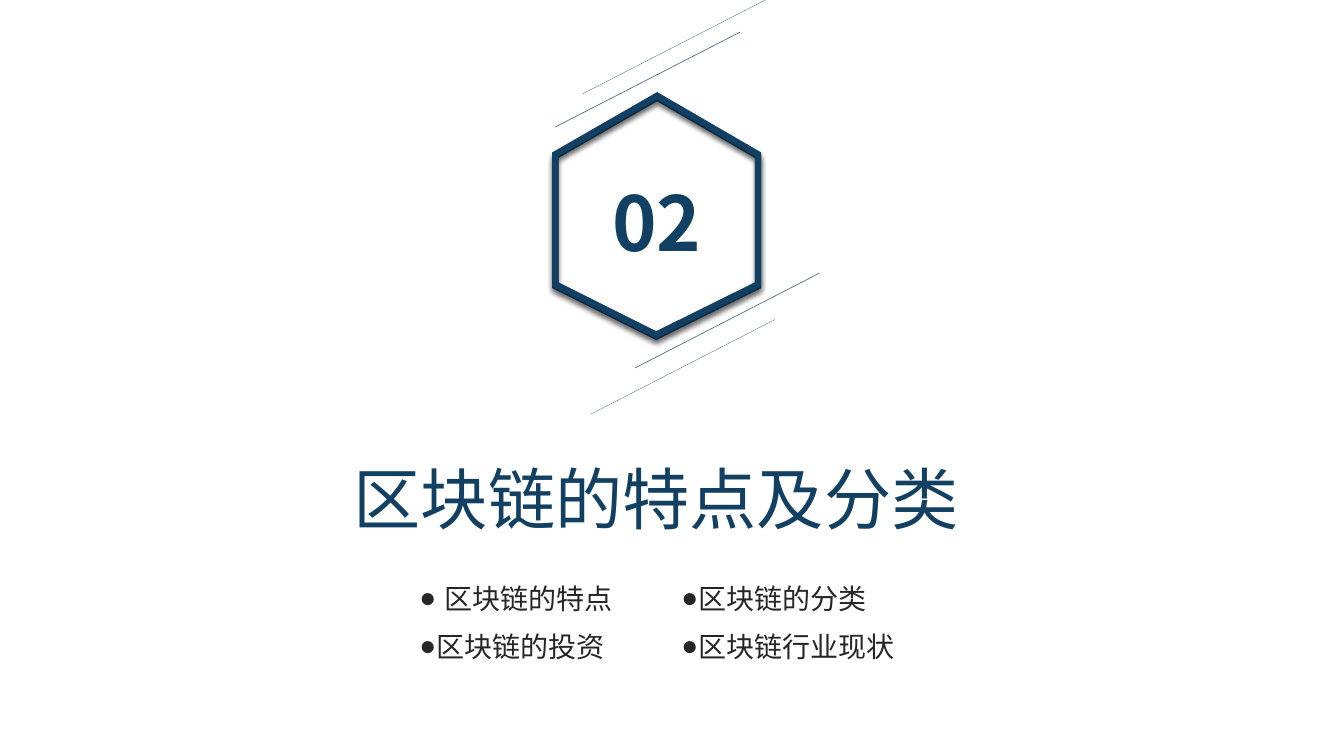
"""Build the section slide on the features and types of blockchain."""
import pptx
import pptx.dml.color
import pptx.enum.shapes
import pptx.enum.text
import pptx.oxml
import pptx.oxml.ns
import pptx.util

Pt = pptx.util.Pt
FONT = "Noto Sans CJK SC"
COLORS = {"navy": "124062", "slate": "537285", "text": "262626", "shadow": "000000"}
NAMESPACE = pptx.oxml.ns.nsdecls("a")
SHADOW = (
    f'<a:effectLst {NAMESPACE}><a:outerShdw blurRad="{Pt(4)}" dist="{Pt(3)}" dir="5400000">'
    f'<a:srgbClr val="{COLORS["shadow"]}"><a:alpha val="40000"/></a:srgbClr>'
    "</a:outerShdw></a:effectLst>"
)
NO_EFFECT = f"<a:effectLst {NAMESPACE}/>"
MITER = f'<a:miter {NAMESPACE} lim="800000"/>'
HEXAGON = [(469.4, 69.8), (541.4, 111.6), (541.4, 204.5),
           (468.7, 240.5), (396.7, 204.5), (396.7, 111.6)]
LINES = [(453.6, 262.8, 0.5), (421.9, 295.9, 0.25), (396.7, 90.7, 0.5), (416.2, 67, 0.25)]
LINE_RUN, LINE_RISE = 131.8, 67.7
COLUMNS = [
    (299.5, [("区块链的特点", 18), ("区块链的投资", 0)]),
    (486.7, [("区块链的分类", 0), ("区块链行业现状", 0)]),
]


def color(name):
    return pptx.dml.color.RGBColor.from_string(COLORS[name])


def apply_format(target, values):
    for name, value in values.items():
        setattr(target, name, value)


def place(shape, left, top, width, height):
    apply_format(shape, {"left": Pt(left), "top": Pt(top),
                         "width": Pt(width), "height": Pt(height)})


def format_frame(frame, inset_x, inset_y):
    apply_format(frame, {
        "margin_left": Pt(inset_x), "margin_right": Pt(inset_x),
        "margin_top": Pt(inset_y), "margin_bottom": Pt(inset_y),
        "vertical_anchor": pptx.enum.text.MSO_ANCHOR.TOP,
        "auto_size": pptx.enum.text.MSO_AUTO_SIZE.NONE,
        "word_wrap": True})


def format_paragraph(paragraph, size, color_name, bold=False, **values):
    apply_format(paragraph, {"alignment": pptx.enum.text.PP_ALIGN.LEFT,
                             "line_spacing": 1.0, "space_before": Pt(0), **values})
    for run in paragraph.runs:
        apply_format(run.font, {"name": FONT, "size": Pt(size), "bold": bold})
        run.font.color.rgb = color(color_name)
        fonts = run.font._element
        east_asian = pptx.oxml.parse_xml(f'<a:ea {NAMESPACE} typeface="{FONT}"/>')
        fonts.find(pptx.oxml.ns.qn("a:latin")).addnext(east_asian)


def add_bullet(paragraph, margin):
    properties = paragraph._p.get_or_add_pPr()
    properties.set("marL", str(Pt(margin)))
    properties.set("indent", str(Pt(-18)))
    for xml in (f'<a:buFont {NAMESPACE} typeface="Arial"/>',
                f'<a:buChar {NAMESPACE} char="●"/>'):
        properties.append(pptx.oxml.parse_xml(xml))


def add_hexagon(slide, shift):
    points = [(Pt(x), Pt(y + shift)) for x, y in HEXAGON]
    builder = slide.shapes.build_freeform(*points[0])
    builder.add_line_segments(points[1:], close=True)
    shape = builder.convert_to_shape()
    shape.fill.background()
    shape.line.color.rgb = color("navy")
    shape.line.width = Pt(4.5)
    properties = shape._element.spPr
    properties.find(pptx.oxml.ns.qn("a:ln")).append(pptx.oxml.parse_xml(MITER))
    properties.append(pptx.oxml.parse_xml(SHADOW))


def add_slanted_line(slide, left, bottom, weight):
    line = slide.shapes.add_connector(
        pptx.enum.shapes.MSO_CONNECTOR.STRAIGHT,
        Pt(left), Pt(bottom), Pt(left + LINE_RUN), Pt(bottom - LINE_RISE))
    line.line.color.rgb = color("slate")
    line.line.width = Pt(weight)
    line._element.spPr.append(pptx.oxml.parse_xml(NO_EFFECT))


def add_number(slide, text):
    shape = slide.shapes.add_textbox(Pt(427), Pt(122.4), Pt(84.2), Pt(72.7))
    format_frame(shape.text_frame, 7.2, 3.6)
    paragraph = shape.text_frame.paragraphs[0]
    paragraph.text = text
    format_paragraph(paragraph, 54, "navy", bold=True,
                     alignment=pptx.enum.text.PP_ALIGN.CENTER)


def fill_title(shape, text):
    place(shape, 245.5, 323.3, 460, 65.5)
    format_frame(shape.text_frame, 7.2, 3.6)
    shape.text_frame.text = text
    format_paragraph(shape.text_frame.paragraphs[0], 48, "navy")


def fill_column(shape, left, items):
    place(shape, left, 415.4, 211, 58.3)
    frame = shape.text_frame
    format_frame(frame, 0, 0)
    frame.text = "\n".join(text for text, margin in items)
    for index, (paragraph, (text, margin)) in enumerate(zip(frame.paragraphs, items)):
        add_bullet(paragraph, margin)
        format_paragraph(paragraph, 20, "text", space_before=Pt(10 if index else 0))


def main():
    presentation = pptx.Presentation()
    presentation.slide_width, presentation.slide_height = Pt(960), Pt(540)
    slide = presentation.slides.add_slide(presentation.slide_layouts[3])
    title, *bodies = slide.placeholders
    for shift in (0, -1.4):
        add_hexagon(slide, shift)
    fill_title(title, "区块链的特点及分类")
    for line in LINES:
        add_slanted_line(slide, *line)
    add_number(slide, "02")
    for body, column in zip(bodies, COLUMNS):
        fill_column(body, *column)
    presentation.save("out.pptx")


if __name__ == "__main__":
    main()
